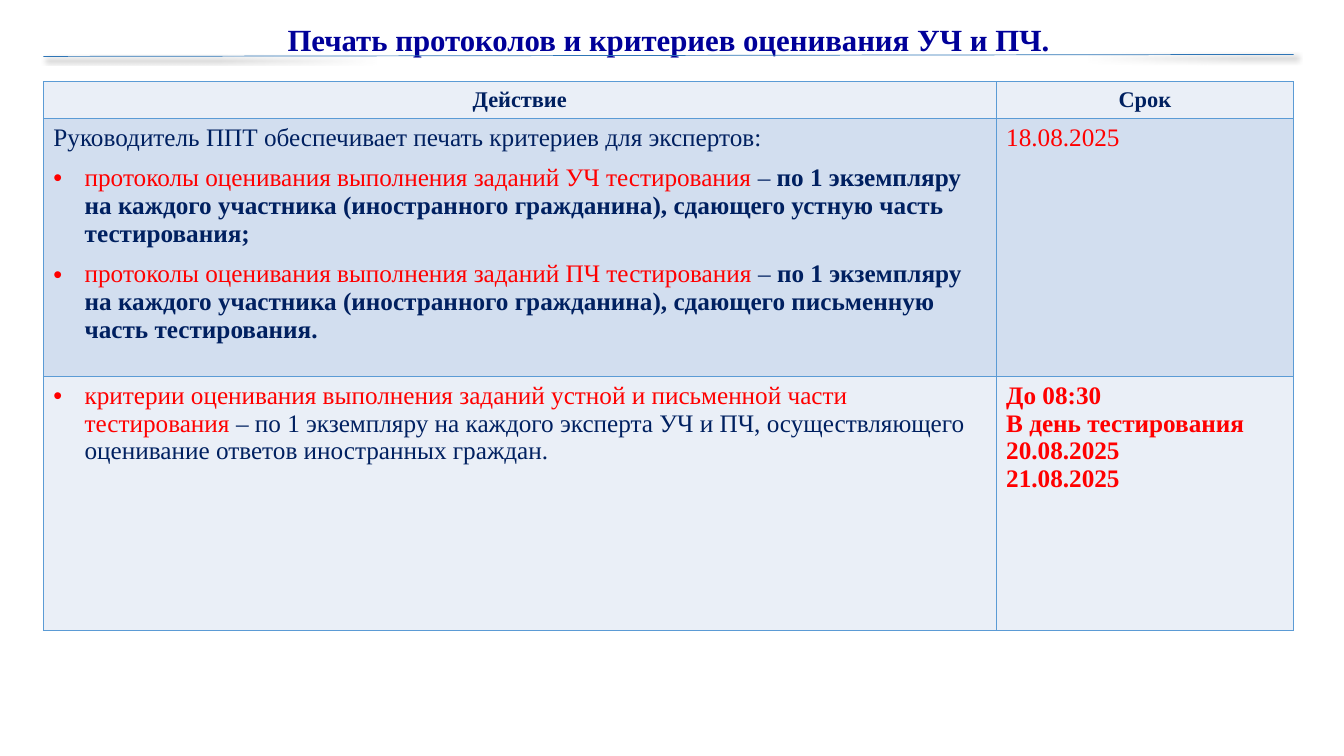
from dataclasses import dataclass

from lxml.etree import SubElement
from pptx import Presentation
from pptx.dml.color import RGBColor
from pptx.enum.shapes import MSO_CONNECTOR
from pptx.enum.text import MSO_ANCHOR, PP_ALIGN
from pptx.oxml import parse_xml
from pptx.oxml.ns import nsdecls, qn
from pptx.util import Inches, Pt

NAVY = RGBColor(0x00, 0x20, 0x60)
TITLE_BLUE = RGBColor(0x00, 0x00, 0x99)
RED = RGBColor(0xFF, 0x00, 0x00)
RULE_BLUE = RGBColor(0x2E, 0x75, 0xB6)
BORDER_BLUE = RGBColor(0x5B, 0x9B, 0xD5)
PALE = RGBColor(0xEA, 0xEF, 0xF7)
LIGHT = RGBColor(0xD2, 0xDE, 0xEF)

FONT = "Times New Roman"
LEFT, WIDTH = 0.43, 12.4
BULLET_INDENT = Inches(0.31)


@dataclass(frozen=True)
class Run:
    text: str
    color: RGBColor = NAVY
    bold: bool = False
    size: float = 18


@dataclass(frozen=True)
class Para:
    runs: tuple[Run, ...]
    bullet: bool = False
    gap: float = 0
    align: PP_ALIGN = PP_ALIGN.LEFT
    spacing: float = 1.0


@dataclass(frozen=True)
class Row:
    height: float
    fill: RGBColor
    anchor: MSO_ANCHOR
    cells: tuple[tuple[Para, ...], ...]


def heading(text: str) -> tuple[Para, ...]:
    return (Para((Run(text, bold=True, size=16),), align=PP_ALIGN.CENTER),)


def protocol(part: str, ending: str) -> Para:
    return Para(
        (
            Run(f"протоколы оценивания выполнения заданий {part} тестирования ", RED),
            Run("– "),
            Run(
                "по 1 экземпляру на каждого участника (иностранного гражданина), "
                f"сдающего {ending}",
                bold=True,
            ),
        ),
        bullet=True,
        gap=9,
    )


TITLE = Para(
    (Run("Печать протоколов и критериев оценивания УЧ и ПЧ.", TITLE_BLUE, True, 22),),
    align=PP_ALIGN.CENTER,
    spacing=0.9,
)
COLUMN_WIDTHS = (9.45, 2.95)
DEADLINES = ("До 08:30", "В день тестирования", "20.08.2025", "21.08.2025")
ROWS = (
    Row(0.35, PALE, MSO_ANCHOR.MIDDLE, (heading("Действие"), heading("Срок"))),
    Row(2.56, LIGHT, MSO_ANCHOR.TOP, (
        (
            Para((Run("Руководитель ППТ обеспечивает печать критериев для экспертов:"),)),
            protocol("УЧ", "устную часть тестирования;"),
            protocol("ПЧ", "письменную часть тестирования."),
        ),
        (Para((Run("18.08.2025", RED),)),),
    )),
    Row(2.52, PALE, MSO_ANCHOR.TOP, (
        (
            Para(
                (
                    Run("критерии оценивания выполнения заданий устной и письменной "
                        "части тестирования ", RED),
                    Run("– по 1 экземпляру на каждого эксперта УЧ и ПЧ, осуществляющего "
                        "оценивание ответов иностранных граждан."),
                ),
                bullet=True,
            ),
        ),
        tuple(Para((Run(line, RED, True),)) for line in DEADLINES),
    )),
)


def write(frame, paras: tuple[Para, ...]) -> None:
    for index, para in enumerate(paras):
        paragraph = frame.paragraphs[0] if index == 0 else frame.add_paragraph()
        layout = {
            "alignment": para.align,
            "line_spacing": para.spacing,
            "space_before": Pt(para.gap),
        }
        for name, value in layout.items():
            setattr(paragraph, name, value)
        if para.bullet:
            properties = paragraph._p.get_or_add_pPr()
            properties.set("marL", str(BULLET_INDENT))
            properties.set("indent", str(-BULLET_INDENT))
            SubElement(properties, qn("a:buFont"), typeface="Arial")
            SubElement(properties, qn("a:buChar"), char="•")
        for part in para.runs:
            run = paragraph.add_run()
            run.text = part.text
            run.font.color.rgb = part.color
            for name, value in {"name": FONT, "size": Pt(part.size), "bold": part.bold}.items():
                setattr(run.font, name, value)


def add_borders(cell) -> None:
    properties = cell._tc.get_or_add_tcPr()
    for index, side in enumerate(("lnL", "lnR", "lnT", "lnB")):
        properties.insert(index, parse_xml(
            f'<a:{side} {nsdecls("a")} w="{Pt(1)}"><a:solidFill>'
            f'<a:srgbClr val="{BORDER_BLUE}"/></a:solidFill></a:{side}>'
        ))


def add_title(slide) -> None:
    title = slide.shapes.add_textbox(Inches(LEFT), 0, Inches(WIDTH), Inches(0.63))
    title.text_frame.word_wrap = True
    title.text_frame.vertical_anchor = MSO_ANCHOR.BOTTOM
    write(title.text_frame, (TITLE,))


def add_schedule(slide) -> None:
    table = slide.shapes.add_table(
        len(ROWS), len(COLUMN_WIDTHS), Inches(LEFT), Inches(0.81),
        Inches(WIDTH), Inches(sum(row.height for row in ROWS)),
    ).table
    table.first_row = table.horz_banding = False
    for column, width in zip(table.columns, COLUMN_WIDTHS):
        column.width = Inches(width)
    for table_row, row in zip(table.rows, ROWS):
        table_row.height = Inches(row.height)
        for cell, paras in zip(table_row.cells, row.cells):
            cell.fill.solid()
            cell.fill.fore_color.rgb = row.fill
            cell.vertical_anchor = row.anchor
            add_borders(cell)
            write(cell.text_frame, paras)


def add_title_rule(slide) -> None:
    rule = slide.shapes.add_connector(
        MSO_CONNECTOR.STRAIGHT,
        Inches(LEFT), Inches(0.56), Inches(LEFT + WIDTH), Inches(0.54),
    )
    rule.line.color.rgb = RULE_BLUE
    rule.line.width = Pt(0.5)
    rule._element.spPr.append(parse_xml(
        f'<a:effectLst {nsdecls("a")}>'
        f'<a:outerShdw blurRad="{Pt(4)}" dist="{Pt(3)}" dir="{45 * 60000}" '
        'algn="tl" rotWithShape="0"><a:srgbClr val="000000">'
        '<a:alpha val="40000"/></a:srgbClr></a:outerShdw></a:effectLst>'
    ))


def main() -> None:
    deck = Presentation()
    deck.slide_width, deck.slide_height = Inches(13.33), Inches(7.5)
    slide = deck.slides.add_slide(deck.slide_layouts[6])
    add_title(slide)
    add_schedule(slide)
    add_title_rule(slide)
    deck.save("out.pptx")


if __name__ == "__main__":
    main()
